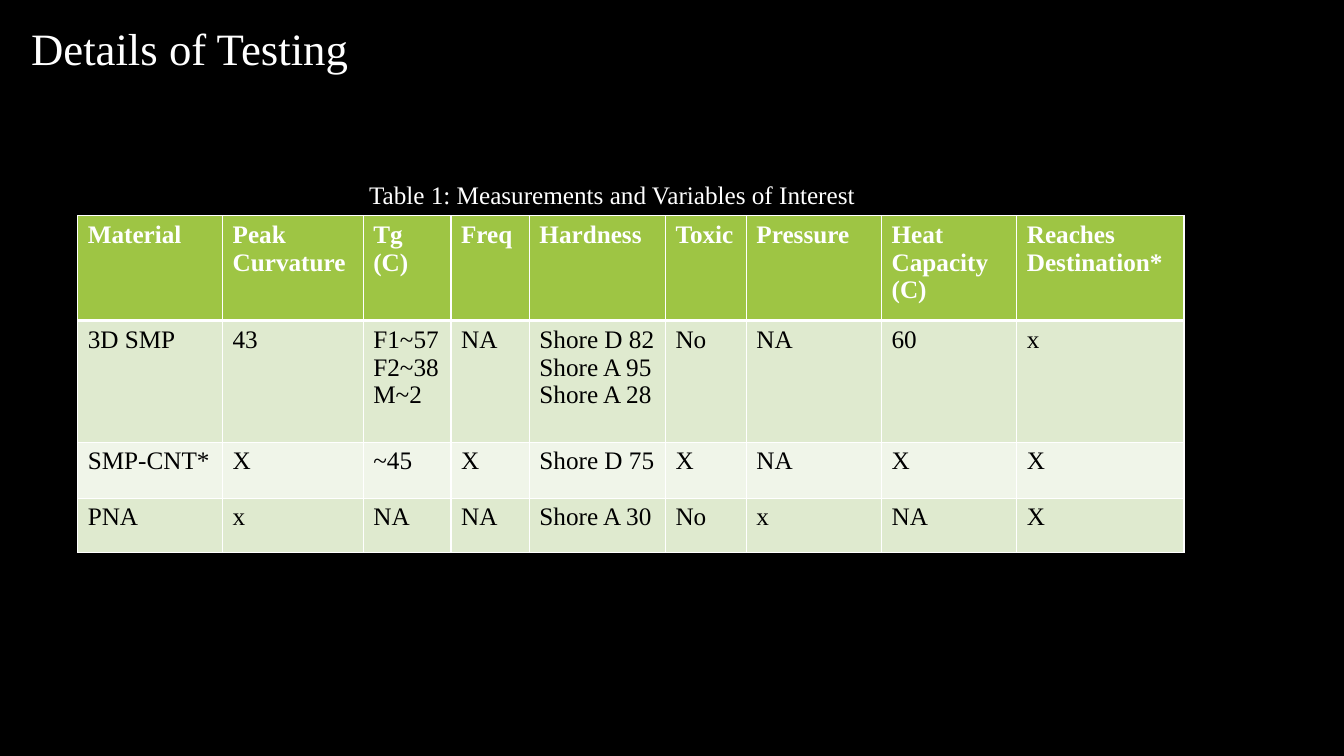
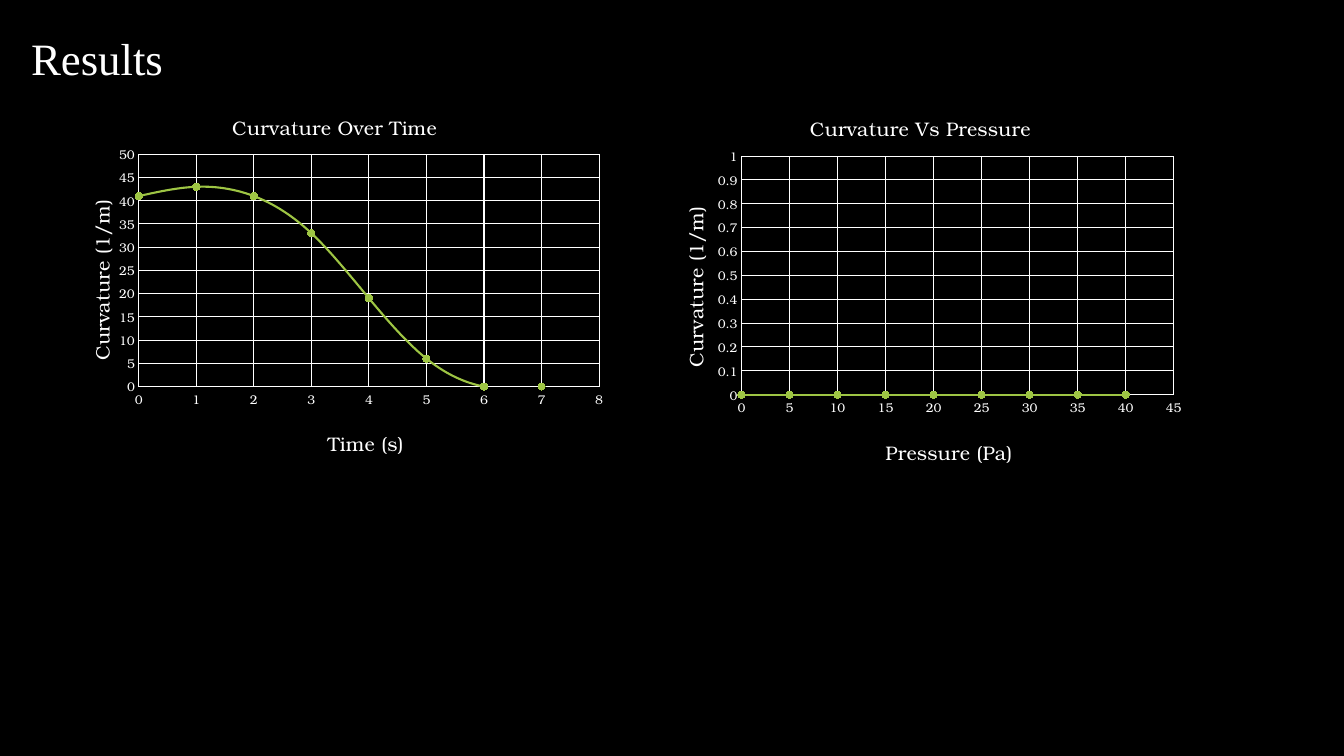
import pptx
import pptx.chart.data
import pptx.dml.color
import pptx.enum.chart
import pptx.enum.text
import pptx.oxml
import pptx.oxml.ns
import pptx.util

Pt = pptx.util.Pt
qn = pptx.oxml.ns.qn
SERIF = "Times New Roman"
CHART_FONT = "TeX Gyre Bonum"
WHITE, BLACK, GREEN = "FFFFFF", "000000", "9EC544"
BANDS = ("DFEACF", "F0F5E9")

COLUMN_WIDTHS = (103.5, 100.5, 62.7, 56, 97.2, 57.8, 96.6, 96.6, 119.5)
ROW_HEIGHTS = (75, 87, 40, 38.5)
MEASUREMENTS = (
    ("Material", "Peak Curvature", "Tg (C)", "Freq", "Hardness", "Toxic",
     "Pressure", "Heat Capacity (C)", "Reaches Destination*"),
    ("3D SMP", "43", "F1~57\nF2~38\nM~2", "NA",
     "Shore D 82\nShore A 95\nShore A 28", "No", "NA", "60", "x"),
    ("SMP-CNT*", "X", "~45", "X", "Shore D 75", "X", "NA", "X", "X"),
    ("PNA", "x", "NA", "NA", "Shore A 30", "No", "x", "NA", "X"),
)


def colour(value):
    """Return the colour for a hex string."""
    return pptx.dml.color.RGBColor.from_string(value)


def format_font(font, size, ink=WHITE, face=SERIF, bold=False):
    """Set the face, size, weight and colour of a font."""
    font.name, font.size, font.bold = face, Pt(size), bold
    font.color.rgb = colour(ink)


def write(frame, text, **style):
    """Write each line of text as a formatted paragraph."""
    for index, line in enumerate(text.split("\n")):
        para = frame.paragraphs[0] if index == 0 else frame.add_paragraph()
        span = para.add_run()
        span.text = line
        format_font(span.font, **style)


def add_page(deck, title, box):
    """Add a page with its title in the given box."""
    page = deck.slides.add_slide(deck.slide_layouts[5])
    shape = page.shapes.title
    shape.left, shape.top, shape.width, shape.height = map(Pt, box)
    frame = shape.text_frame
    frame.auto_size = pptx.enum.text.MSO_AUTO_SIZE.NONE
    frame.vertical_anchor = pptx.enum.text.MSO_ANCHOR.TOP
    write(frame, title, size=32)
    frame.paragraphs[0].alignment = pptx.enum.text.PP_ALIGN.LEFT
    return page


def add_caption(page, text, box):
    """Add a caption in the given box."""
    frame = page.shapes.add_textbox(*map(Pt, box)).text_frame
    frame.word_wrap = True
    write(frame, text, size=18)


def set_borders(cell, bottom):
    """Draw white cell borders, with the given bottom width."""
    properties = cell._tc.get_or_add_tcPr()
    for index, (side, width) in enumerate(
            (("L", 1), ("R", 1), ("T", 1), ("B", bottom))):
        properties.insert(index, pptx.oxml.parse_xml(
            f'<a:ln{side} {pptx.oxml.ns.nsdecls("a")} w="{Pt(width)}">'
            f'<a:solidFill><a:srgbClr val="{WHITE}"/></a:solidFill></a:ln{side}>'))


def add_measurements(page, left, top):
    """Add the table of measurements at the given corner."""
    table = page.shapes.add_table(
        len(ROW_HEIGHTS), len(COLUMN_WIDTHS), Pt(left), Pt(top),
        Pt(sum(COLUMN_WIDTHS)), Pt(sum(ROW_HEIGHTS))).table
    for column, width in zip(table.columns, COLUMN_WIDTHS):
        column.width = Pt(width)
    for index, (row, texts) in enumerate(zip(table.rows, MEASUREMENTS)):
        header = index == 0
        row.height = Pt(ROW_HEIGHTS[index])
        for cell, text in zip(row.cells, texts):
            cell.fill.solid()
            cell.fill.fore_color.rgb = colour(
                GREEN if header else BANDS[(index - 1) % 2])
            set_borders(cell, 3 if header else 1)
            write(cell.text_frame, text, size=18,
                  ink=WHITE if header else BLACK, bold=header)


def set_layout(element, **fractions):
    """Fix the place of a chart part as fractions of the chart."""
    for old in element.findall(qn("c:layout")):
        element.remove(old)
    modes = '<c:layoutTarget val="inner"/>' if "w" in fractions else ""
    modes += '<c:xMode val="edge"/><c:yMode val="edge"/>'
    values = "".join(f'<c:{key} val="{value}"/>' for key, value in fractions.items())
    element.insert(
        0 if element.find(qn("c:tx")) is None else 1,
        pptx.oxml.parse_xml(
            f'<c:layout {pptx.oxml.ns.nsdecls("c")}><c:manualLayout>'
            f'{modes}{values}</c:manualLayout></c:layout>'))


def title_part(title, text, spot):
    """Write a chart or axis title at the given spot."""
    write(title.text_frame, text, size=14, face=CHART_FONT)
    set_layout(title.element, x=spot[0], y=spot[1])


def format_axis(axis, title, spot, maximum, step):
    """Format one axis with its scale, grid and title."""
    axis.minimum_scale, axis.maximum_scale, axis.major_unit = 0, maximum, step
    axis.major_tick_mark = axis.minor_tick_mark = pptx.enum.chart.XL_TICK_MARK.NONE
    axis.has_major_gridlines = True
    for line in (axis.format.line, axis.major_gridlines.format.line):
        line.color.rgb = colour(WHITE)
        line.width = Pt(0.75)
    format_font(axis.tick_labels.font, 9, face=CHART_FONT)
    title_part(axis.axis_title, title, spot)


def add_curve(page, box, title, points, across, up, plot, title_spot):
    """Add a smooth scatter chart in the given box."""
    data = pptx.chart.data.XyChartData()
    series_data = data.add_series("Series 1")
    for x, y in points:
        series_data.add_data_point(x, y)
    chart = page.shapes.add_chart(
        pptx.enum.chart.XL_CHART_TYPE.XY_SCATTER_SMOOTH, *map(Pt, box), data).chart
    chart.has_legend = False
    format_font(chart.font, 10, face=CHART_FONT)
    body = chart.element.find(qn("c:chart"))
    body.addnext(pptx.oxml.parse_xml(
        f'<c:spPr {pptx.oxml.ns.nsdecls("c", "a")}><a:noFill/>'
        '<a:ln><a:noFill/></a:ln></c:spPr>'))
    set_layout(body.find(qn("c:plotArea")), **dict(zip("xywh", plot)))
    title_part(chart.chart_title, title, title_spot)
    format_axis(chart.category_axis, *across)
    format_axis(chart.value_axis, *up)
    chart.plots[0].vary_by_categories = False
    series = chart.plots[0].series[0]
    for smooth in series.format.line and chart.element.iter(qn("c:smooth")):
        smooth.set("val", "1")
    series.format.line.color.rgb = colour(GREEN)
    series.format.line.width = Pt(1.5)
    marker = series.marker
    marker.style, marker.size = pptx.enum.chart.XL_MARKER_STYLE.CIRCLE, 5
    marker.format.fill.solid()
    marker.format.fill.fore_color.rgb = colour(GREEN)
    marker.format.line.color.rgb = colour(GREEN)


def add_testing(deck):
    """Add the page with the table of measurements."""
    page = add_page(deck, "Details of Testing", (15, 11, 315, 46))
    add_measurements(page, 55.5, 154)
    add_caption(page, "Table 1: Measurements and Variables of Interest",
                (256.5, 124.5, 389.5, 29))


def add_results(deck):
    """Add the page with the two curvature charts."""
    page = add_page(deck, "Results", (15, 18, 267, 46))
    add_curve(page, (39, 64, 401, 272), "Curvature Over Time",
              enumerate((41, 43, 41, 33, 19, 6, 0, 0)),
              ("Time (s)", (0.48, 0.88), 8, 1),
              ("Curvature (1/m)", (0.05, 0.28), 50, 5),
              (0.15, 0.17, 0.82, 0.61), (0.31, 0.05))
    add_curve(page, (464, 64, 386, 279.5), "Curvature Vs Pressure",
              [(pressure, 0) for pressure in range(0, 41, 5)],
              ("Pressure (Pa)", (0.43, 0.88), 45, 5),
              ("Curvature (1/m)", (0.05, 0.29), 1, 0.1),
              (0.17, 0.17, 0.8, 0.61), (0.29, 0.05))


def main():
    """Build and save the deck."""
    deck = pptx.Presentation()
    deck.slide_width, deck.slide_height = Pt(960), Pt(540)
    background = deck.slide_master.background.fill
    background.solid()
    background.fore_color.rgb = colour(BLACK)
    add_testing(deck)
    add_results(deck)
    deck.save("out.pptx")


if __name__ == "__main__":
    main()
